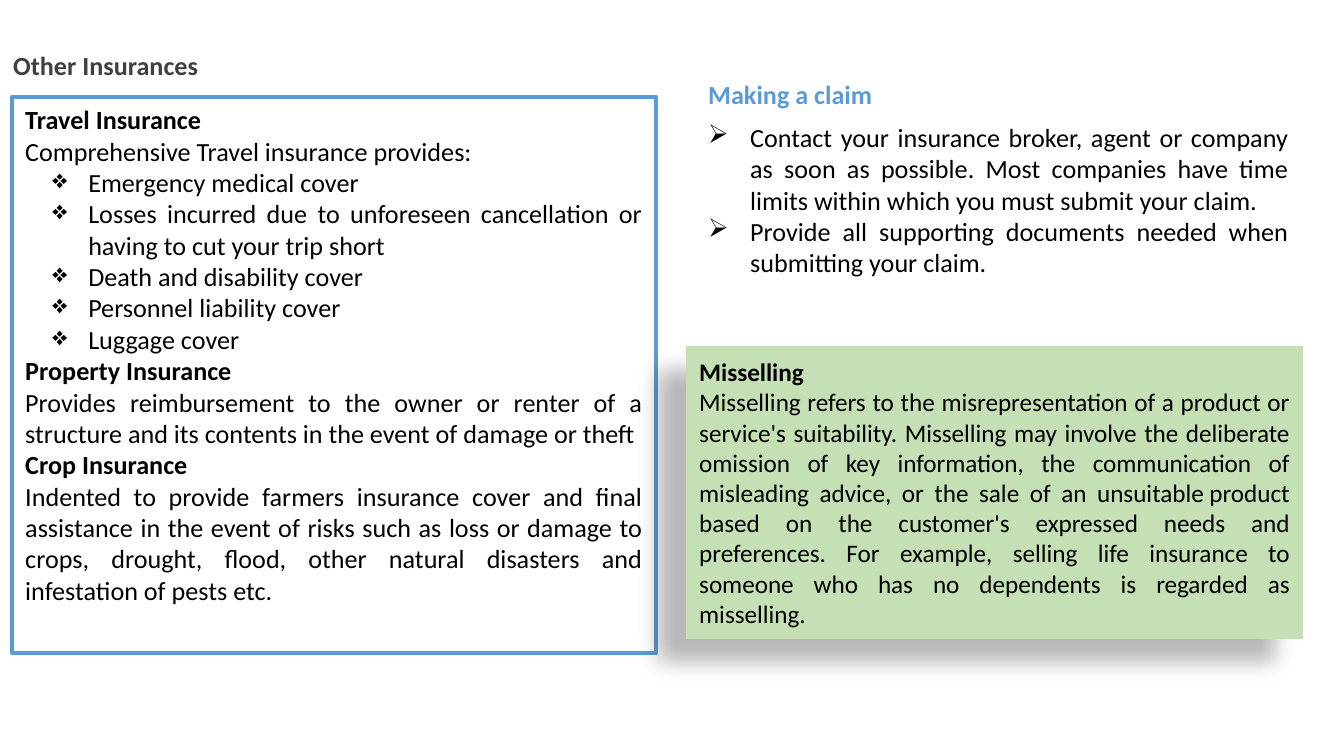
import pptx
import pptx.util
import pptx.dml.color
import pptx.enum.shapes
import pptx.enum.text
import pptx.oxml.ns
import lxml.etree

RGBColor = pptx.dml.color.RGBColor
BLACK = RGBColor(0x00, 0x00, 0x00)
GREY = RGBColor(0x40, 0x40, 0x40)
BLUE = RGBColor(0x5B, 0x9B, 0xD5)
GREEN = RGBColor(0xC5, 0xE0, 0xB4)
WHITE = RGBColor(0xFF, 0xFF, 0xFF)

FONT = "Calibri"
PX = 914400 / 134.4
SLIDE_SIZE = (1344, 756)

# Content: each paragraph is (kind, text)
TITLE = [("head", "Other Insurances")]
COVERS = [
    ("head", "Travel Insurance"),
    ("body", "Comprehensive Travel insurance provides:"),
    ("❖", "Emergency medical cover"),
    ("❖", "Losses incurred due to unforeseen cancellation or having to cut "
          "your trip short"),
    ("❖", "Death and disability cover"),
    ("❖", "Personnel liability cover"),
    ("❖", "Luggage cover"),
    ("head", "Property Insurance"),
    ("body", "Provides reimbursement to the owner or renter of a structure and "
             "its contents in the event of damage or theft"),
    ("head", "Crop Insurance"),
    ("body", "Indented to provide farmers insurance cover and final assistance "
             "in the event of risks such as loss or damage to crops, drought, "
             "flood, other natural disasters and infestation of pests etc."),
]
CLAIM = [
    ("head", "Making a claim"),
    ("➢", "Contact your insurance broker, agent or company as soon as possible. "
          "Most companies have time limits within which you must submit your "
          "claim."),
    ("➢", "Provide all supporting documents needed when submitting your claim."),
]
MISSELLING = [
    ("head", "Misselling"),
    ("body", "Misselling refers to the misrepresentation of a product or "
             "service's suitability. Misselling may involve the deliberate "
             "omission of key information, the communication of misleading "
             "advice, or the sale of an unsuitable\u00a0product based on the "
             "customer's expressed needs and preferences. For example, selling "
             "life insurance to someone who has no dependents is regarded as "
             "misselling."),
]
# Left margin and hanging indent in px for each bullet
BULLET_INDENTS = {"❖": (63, -36), "➢": (42, -42)}


def px(length):
    return pptx.util.Emu(round(length * PX))


def add_xml(parent, tag, **attributes):
    return lxml.etree.SubElement(parent, pptx.oxml.ns.qn(tag), attributes)


def write(shape, paragraphs, size=14, head_color=BLACK,
          anchor=pptx.enum.text.MSO_ANCHOR.TOP):
    frame = shape.text_frame
    frame.word_wrap = True
    frame.vertical_anchor = anchor
    for i, (kind, text) in enumerate(paragraphs):
        line = frame.add_paragraph() if i else frame.paragraphs[0]
        line.text = text
        is_head = kind == "head"
        line.alignment = (pptx.enum.text.PP_ALIGN.LEFT if is_head
                          else pptx.enum.text.PP_ALIGN.JUSTIFY)
        if kind in BULLET_INDENTS:
            margin, indent = BULLET_INDENTS[kind]
            properties = line._p.get_or_add_pPr()
            properties.set("marL", str(px(margin)))
            properties.set("indent", str(px(indent)))
            add_xml(properties, "a:buChar", char=kind)
        line.font.name = FONT
        line.font.size = pptx.util.Pt(size)
        line.font.bold = is_head
        line.font.color.rgb = head_color if is_head else BLACK


def add_panel(box, fill):
    panel = slide.shapes.add_shape(pptx.enum.shapes.MSO_SHAPE.RECTANGLE,
                                   *map(px, box))
    panel.fill.solid()
    panel.fill.fore_color.rgb = fill
    panel.line.fill.background()
    panel.shadow.inherit = False
    return panel


deck = pptx.Presentation()
deck.slide_width, deck.slide_height = map(px, SLIDE_SIZE)
slide = deck.slides.add_slide(deck.slide_layouts[6])

# Slide title
title = slide.shapes.add_textbox(*map(px, (0, 43, 656, 46)))
write(title, TITLE, head_color=GREY)

# Outlined panel with the kinds of insurance
covers = add_panel((12, 97, 644, 556), WHITE)
covers.line.color.rgb = BLUE
covers.line.width = pptx.util.Pt(2.25)
write(covers, COVERS)

# Steps for a claim
claim = slide.shapes.add_textbox(*map(px, (695, 72, 607, 215)))
write(claim, CLAIM, head_color=BLUE)
claim.text_frame.paragraphs[0].space_after = pptx.util.Pt(6)

# Green panel with a soft shadow to the lower left
misselling = add_panel((686, 346, 617, 293), GREEN)
effects = misselling._element.spPr.find(pptx.oxml.ns.qn("a:effectLst"))
shadow = add_xml(effects, "a:outerShdw", blurRad=str(pptx.util.Pt(11.8)),
                 dist=str(pptx.util.Pt(19.7)), dir=str(141 * 60000),
                 rotWithShape="0")
shade = add_xml(shadow, "a:srgbClr", val=str(BLACK))
add_xml(shade, "a:alpha", val="28000")
write(misselling, MISSELLING, size=13.5,
      anchor=pptx.enum.text.MSO_ANCHOR.MIDDLE)

deck.save("out.pptx")
